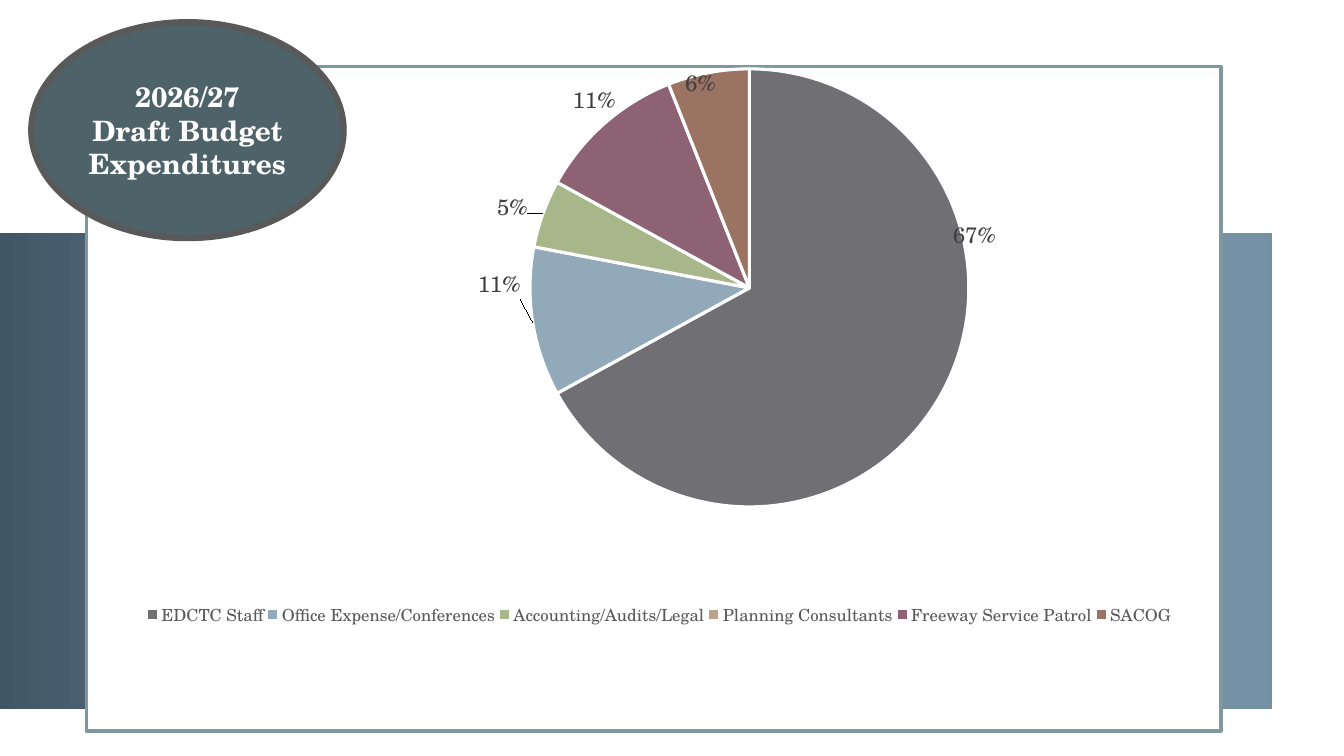
from copy import deepcopy
from itertools import accumulate
from math import cos, pi, sin

from lxml import etree
from pptx import Presentation
from pptx.chart.data import CategoryChartData
from pptx.dml.color import RGBColor
from pptx.enum.chart import XL_CHART_TYPE, XL_LABEL_POSITION, XL_LEGEND_POSITION
from pptx.enum.shapes import MSO_SHAPE
from pptx.enum.text import MSO_ANCHOR, PP_ALIGN
from pptx.oxml import parse_xml
from pptx.oxml.ns import nsdecls, qn
from pptx.util import Cm, Pt

FONT = "TeX Gyre Schola"
WHITE = RGBColor(0xFF, 0xFF, 0xFF)
BAND_DARK = RGBColor(0x41, 0x56, 0x65)
BAND_LIGHT = RGBColor(0x74, 0x91, 0xA6)
BADGE_FILL = RGBColor(0x4E, 0x63, 0x69)
GREY = RGBColor(0x59, 0x59, 0x59)
LABEL_GREY = RGBColor(0x40, 0x40, 0x40)
FRAME = RGBColor(0x7E, 0x98, 0xA0)

HEADING = ["2026/27", "Draft Budget Expenditures"]

# Category, percent, slice colour, label centre on the slide in cm
EXPENDITURES = [
    ("EDCTC Staff", 67, RGBColor(0x6F, 0x6F, 0x74), (24.57, 5.9)),
    ("Office Expense/Conferences", 11, RGBColor(0x92, 0xA9, 0xB9), (12.57, 7.13)),
    ("Accounting/Audits/Legal", 5, RGBColor(0xA7, 0xB7, 0x89), (12.9, 5.17)),
    ("Planning Consultants", 0, RGBColor(0xB9, 0xA4, 0x89), None),
    ("Freeway Service Patrol", 11, RGBColor(0x8D, 0x63, 0x74), (14.97, 2.49)),
    ("SACOG", 6, RGBColor(0x9B, 0x73, 0x62), (17.67, 2.04)),
]

# Left, top, width, height: in cm on the slide, then as shares of the chart
BAND_BOX = (0, 5.87, 32.05, 12.01)
CHART_BOX = (2.13, 1.63, 28.68, 16.83)
BADGE_BOX = (0.79, 0.56, 7.87, 5.44)
PIE_AREA = (0.325, 0.004, 0.519, 0.659)
LEGEND_AREA = (0.05, 0.8, 0.91, 0.05)


def add_plain_shape(slide, kind, box):
    shape = slide.shapes.add_shape(kind, *map(Cm, box))
    shape.shadow.inherit = False
    return shape


def set_font(font, **values):
    color = values.pop("color", None)
    for name, value in {"name": FONT, **values}.items():
        setattr(font, name, value)
    if color is not None:
        font.color.rgb = color


def make_layout(area, inner=False):
    target = '<c:layoutTarget val="inner"/>' if inner else ""
    modes = "".join(f'<c:{side}Mode val="edge"/>' for side in "xy")
    sizes = "".join(f'<c:{side} val="{share}"/>' for side, share in zip("xywh", area))
    return parse_xml(
        f'<c:layout {nsdecls("c")}><c:manualLayout>{target}{modes}{sizes}'
        "</c:manualLayout></c:layout>"
    )


def label_offsets():
    """Shift of each label from the middle of its slice, as shares of the chart."""
    left, top, width, height = CHART_BOX
    x, y, w, h = PIE_AREA
    center_x = left + (x + w / 2) * width
    center_y = top + (y + h / 2) * height
    reach = min(w * width, h * height) / 4
    total = sum(row[1] for row in EXPENDITURES)
    ends = accumulate(row[1] for row in EXPENDITURES)
    for (_, value, _, target), end in zip(EXPENDITURES, ends):
        if target is None:
            yield None
            continue
        angle = 2 * pi * (end - value / 2) / total
        yield (
            round((target[0] - center_x - reach * sin(angle)) / width, 3),
            round((target[1] - center_y + reach * cos(angle)) / height, 3),
        )


def place_labels(series):
    labels = series.data_labels
    set_font(labels.font, size=Pt(16), color=LABEL_GREY)
    labels.number_format = "0%"
    labels.number_format_is_linked = False
    labels.position = XL_LABEL_POSITION.CENTER
    labels.show_percentage = True
    labels.show_value = False
    element = labels._element
    shared = [deepcopy(child) for child in element
              if etree.QName(child).localname != "showLeaderLines"]
    for index, offset in enumerate(label_offsets()):
        label = parse_xml(f'<c:dLbl {nsdecls("c")}><c:idx val="{index}"/></c:dLbl>')
        if offset is None:
            label.append(parse_xml(f'<c:delete {nsdecls("c")} val="1"/>'))
        else:
            label.append(parse_xml(
                f'<c:layout {nsdecls("c")}><c:manualLayout><c:x val="{offset[0]}"/>'
                f'<c:y val="{offset[1]}"/></c:manualLayout></c:layout>'
            ))
            label.extend(deepcopy(child) for child in shared)
        element.insert(index, label)


def add_pie(slide):
    data = CategoryChartData()
    data.categories = [row[0] for row in EXPENDITURES]
    data.add_series("Series 1", [row[1] for row in EXPENDITURES])
    chart = slide.shapes.add_chart(XL_CHART_TYPE.PIE, *map(Cm, CHART_BOX), data).chart
    chart.has_title = False
    set_font(chart.font, size=Pt(10))
    chart.has_legend = True
    legend = chart.legend
    legend.position = XL_LEGEND_POSITION.BOTTOM
    legend.include_in_layout = False
    set_font(legend.font, size=Pt(12), color=GREY)

    plot = chart.plots[0]
    plot.vary_by_categories = True
    series = plot.series[0]
    for index, (_, _, color, _) in enumerate(EXPENDITURES):
        slice_format = series.points[index].format
        slice_format.fill.solid()
        slice_format.fill.fore_color.rgb = color
        slice_format.line.color.rgb = WHITE
        slice_format.line.width = Pt(2.25)
    place_labels(series)

    chart_space = chart._chartSpace
    plot_area = chart_space.find(".//" + qn("c:plotArea"))
    legend_element = chart_space.find(".//" + qn("c:legend"))
    for parent, position, layout in (
        (plot_area, 0, make_layout(PIE_AREA, inner=True)),
        (legend_element, 1, make_layout(LEGEND_AREA)),
    ):
        for old in parent.findall(qn("c:layout")):
            parent.remove(old)
        parent.insert(position, layout)
    chart_space.find(qn("c:chart")).addnext(parse_xml(
        f'<c:spPr {nsdecls("c", "a")}><a:solidFill><a:srgbClr val="{WHITE}"/></a:solidFill>'
        f'<a:ln w="{Pt(2.25)}"><a:solidFill><a:srgbClr val="{FRAME}"/></a:solidFill></a:ln>'
        "</c:spPr>"
    ))


def add_band(slide):
    band = add_plain_shape(slide, MSO_SHAPE.RECTANGLE, BAND_BOX)
    band.line.fill.background()
    band.fill.gradient()
    band.fill.gradient_angle = 0
    stops = ((0, BAND_DARK), (0.36, BAND_LIGHT))
    for stop, (position, color) in zip(band.fill.gradient_stops, stops):
        stop.position = position
        stop.color.rgb = color


def add_badge(slide):
    badge = add_plain_shape(slide, MSO_SHAPE.OVAL, BADGE_BOX)
    badge.fill.solid()
    badge.fill.fore_color.rgb = BADGE_FILL
    badge.line.color.rgb = GREY
    badge.line.width = Pt(4.5)
    frame = badge.text_frame
    frame.word_wrap = True
    frame.vertical_anchor = MSO_ANCHOR.MIDDLE
    frame.text = "\n".join(HEADING)
    for paragraph in frame.paragraphs:
        paragraph.alignment = PP_ALIGN.CENTER
        set_font(paragraph.font, size=Pt(20), bold=True, color=WHITE)


def main():
    presentation = Presentation()
    presentation.slide_width = Cm(33.87)
    presentation.slide_height = Cm(19.05)
    slide = presentation.slides.add_slide(presentation.slide_layouts[6])
    add_band(slide)
    add_pie(slide)
    add_badge(slide)
    presentation.save("out.pptx")


if __name__ == "__main__":
    main()
